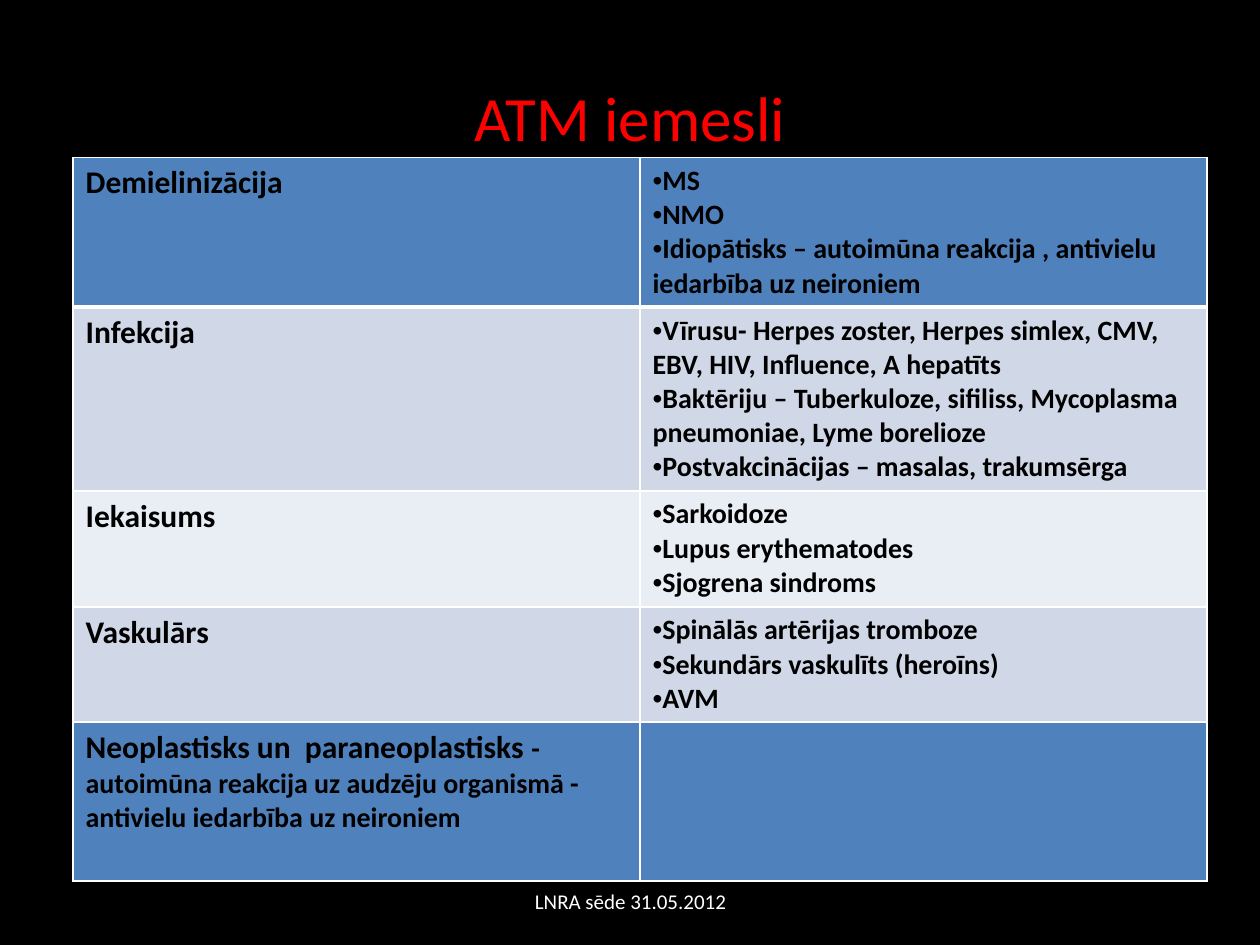
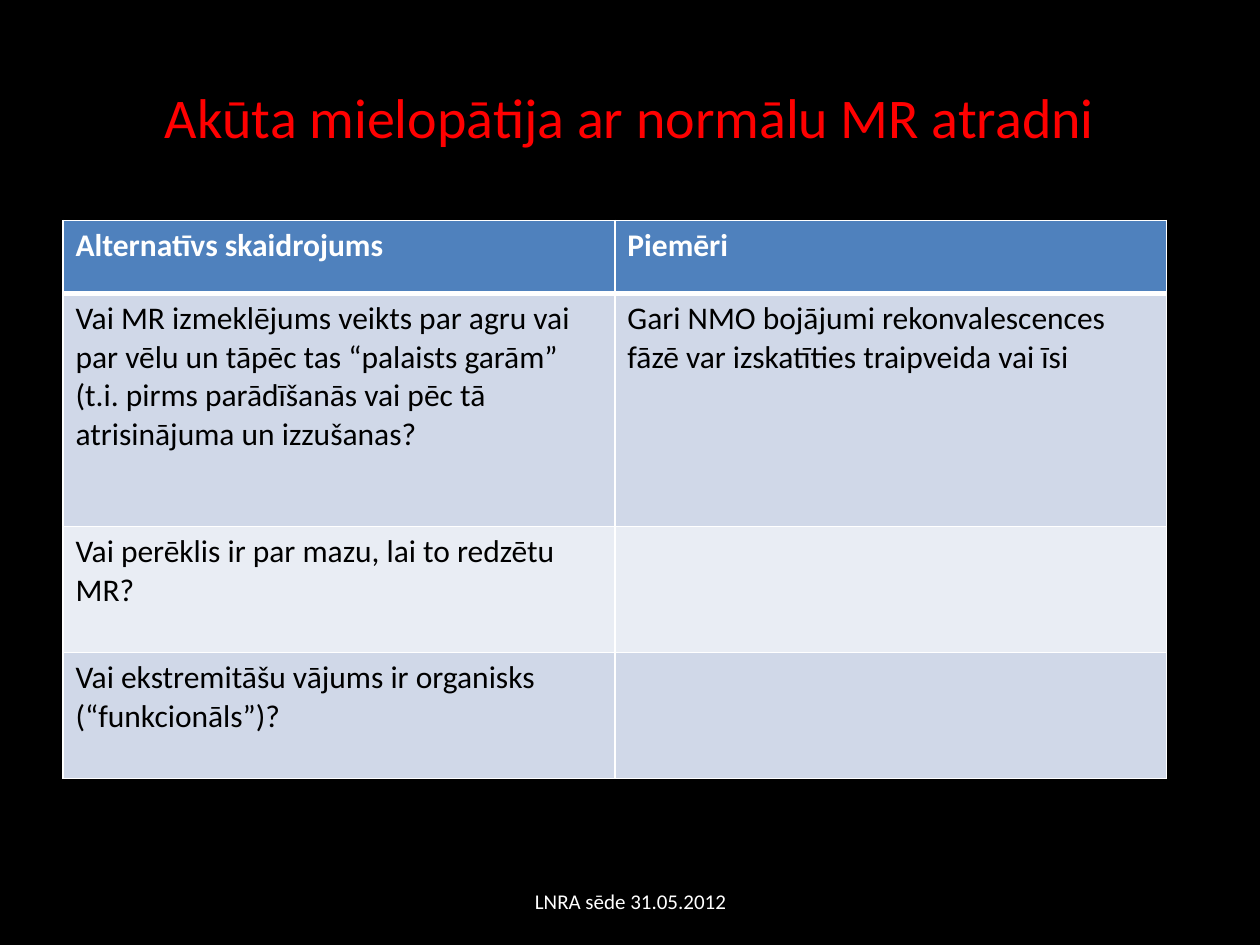
from lxml.etree import SubElement
from pptx import Presentation
from pptx.dml.color import RGBColor
from pptx.enum.text import MSO_ANCHOR, PP_ALIGN
from pptx.oxml.ns import qn
from pptx.util import Inches, Pt

COLORS = {
    "background": "000000",
    "title": "FF0000",
    "light_text": "FFFFFF",
    "dark_text": "000000",
    "border": "FFFFFF",
    "accent": "4F81BD",
    "band": "D0D8E8",
    "pale": "E9EDF4",
}
FONT = "Calibri"
FOOTER = "LNRA sēde 31.05.2012"


def rgb(name):
    return RGBColor.from_string(COLORS[name])


class Deck:
    """Shared style and the slide being built."""

    def __init__(self):
        self.prs = Presentation()
        self.prs.slide_width, self.prs.slide_height = Inches(10), Inches(7.5)
        self.slide = None

    def add_slide(self, title, title_size):
        self.slide = self.prs.slides.add_slide(self.prs.slide_layouts[5])
        background = self.slide.background.fill
        background.solid()
        background.fore_color.rgb = rgb("background")
        heading = self.slide.shapes.title
        place = {"left": 0.5, "top": 0.3, "width": 9, "height": 1.25}
        for side, length in place.items():
            setattr(heading, side, Inches(length))
        self.centered(heading.text_frame, title, size=title_size, color="title")

    def add_footer(self):
        footer = self.slide.shapes.add_textbox(
            Inches(3.42), Inches(6.95), Inches(3.17), Inches(0.4))
        self.centered(footer.text_frame, FOOTER, size=12, color="light_text")

    def centered(self, frame, text, **style):
        frame.word_wrap = True
        frame.vertical_anchor = MSO_ANCHOR.MIDDLE
        paragraph = frame.paragraphs[0]
        paragraph.alignment = PP_ALIGN.CENTER
        self.add_run(paragraph, text, **style)

    def add_run(self, paragraph, text, size, color, bold=False):
        run = paragraph.add_run()
        run.text = text
        run.font.color.rgb = rgb(color)
        font_format = {"name": FONT, "size": Pt(size), "bold": bold}
        for attribute, value in font_format.items():
            setattr(run.font, attribute, value)

    def add_table(self, left, top, col_width, row_heights, row_fills):
        table = self.slide.shapes.add_table(
            len(row_heights), 2, Inches(left), Inches(top),
            Inches(2 * col_width), Inches(sum(row_heights))).table
        for column in table.columns:
            column.width = Inches(col_width)
        for index, (height, fill) in enumerate(zip(row_heights, row_fills)):
            table.rows[index].height = Inches(height)
            for cell in table.rows[index].cells:
                # The rule under the first row is thicker
                self.add_borders(cell, top=3 if index == 1 else 1,
                                 bottom=3 if index == 0 else 1)
                cell.fill.solid()
                cell.fill.fore_color.rgb = rgb(fill)
        return table

    def add_borders(self, cell, top, bottom):
        properties = cell._tc.get_or_add_tcPr()
        for tag, width in {"lnL": 1, "lnR": 1, "lnT": top, "lnB": bottom}.items():
            line = SubElement(properties, qn(f"a:{tag}"), w=str(Pt(width)))
            fill = SubElement(line, qn("a:solidFill"))
            SubElement(fill, qn("a:srgbClr"), val=COLORS["border"])

    def add_bullets(self, cell, items, **style):
        frame = cell.text_frame
        for index, item in enumerate(items):
            paragraph = frame.add_paragraph() if index else frame.paragraphs[0]
            properties = paragraph._p.get_or_add_pPr()
            SubElement(properties, qn("a:buFont"), typeface="Arial")
            SubElement(properties, qn("a:buChar"), char="•")
            self.add_run(paragraph, item, **style)


# Causes: label, details after the label, examples
CAUSES = [
    ("Demielinizācija", "", [
        "MS", "NMO",
        "Idiopātisks – autoimūna reakcija , antivielu iedarbība uz neironiem"]),
    ("Infekcija", "", [
        "Vīrusu- Herpes zoster, Herpes simlex, CMV, EBV, HIV, Influence, A hepatīts",
        "Baktēriju – Tuberkuloze, sifiliss, Mycoplasma pneumoniae, Lyme borelioze",
        "Postvakcinācijas – masalas, trakumsērga"]),
    ("Iekaisums", "", ["Sarkoidoze", "Lupus erythematodes", "Sjogrena sindroms"]),
    ("Vaskulārs", "", [
        "Spinālās artērijas tromboze", "Sekundārs vaskulīts (heroīns)", "AVM"]),
    ("Neoplastisks un  paraneoplastisks ",
     "- autoimūna reakcija uz audzēju organismā - antivielu iedarbība uz neironiem",
     []),
]

EXPLANATIONS = [
    ("Alternatīvs skaidrojums", "Piemēri"),
    ("Vai MR izmeklējums veikts par agru vai par vēlu un tāpēc tas “palaists garām” "
     "(t.i. pirms parādīšanās vai pēc tā atrisinājuma un izzušanas?",
     "Gari NMO bojājumi rekonvalescences fāzē var izskatīties traipveida vai īsi"),
    ("Vai perēklis ir par mazu, lai to redzētu MR?", ""),
    ("Vai ekstremitāšu vājums ir organisks (“funkcionāls”)?", ""),
]


def build_causes(deck):
    deck.add_slide("ATM iemesli", 36)
    table = deck.add_table(0.58, 1.25, 4.5, [1.18, 1.46, 0.92, 0.91, 1.26],
                           ["accent", "band", "pale", "band", "accent"])
    style = {"color": "dark_text", "bold": True}
    for row, (cause, details, examples) in zip(table.rows, CAUSES):
        cause_cell, example_cell = row.cells
        paragraph = cause_cell.text_frame.paragraphs[0]
        deck.add_run(paragraph, cause, size=18, **style)
        if details:
            deck.add_run(paragraph, details, size=16, **style)
        deck.add_bullets(example_cell, examples, size=16, **style)
    deck.add_footer()


def build_explanations(deck):
    deck.add_slide("Akūta mielopātija ar normālu MR atradni", 32)
    table = deck.add_table(0.5, 1.75, 4.38, [0.58, 1.85, 1, 1],
                           ["accent", "band", "pale", "band"])
    for index, texts in enumerate(EXPLANATIONS):
        is_header = index == 0
        color = "light_text" if is_header else "dark_text"
        for cell, text in zip(table.rows[index].cells, texts):
            if text:
                deck.add_run(cell.text_frame.paragraphs[0], text,
                             size=18, color=color, bold=is_header)
    deck.add_footer()


def main():
    deck = Deck()
    build_causes(deck)
    build_explanations(deck)
    deck.prs.save("out.pptx")


if __name__ == "__main__":
    main()
